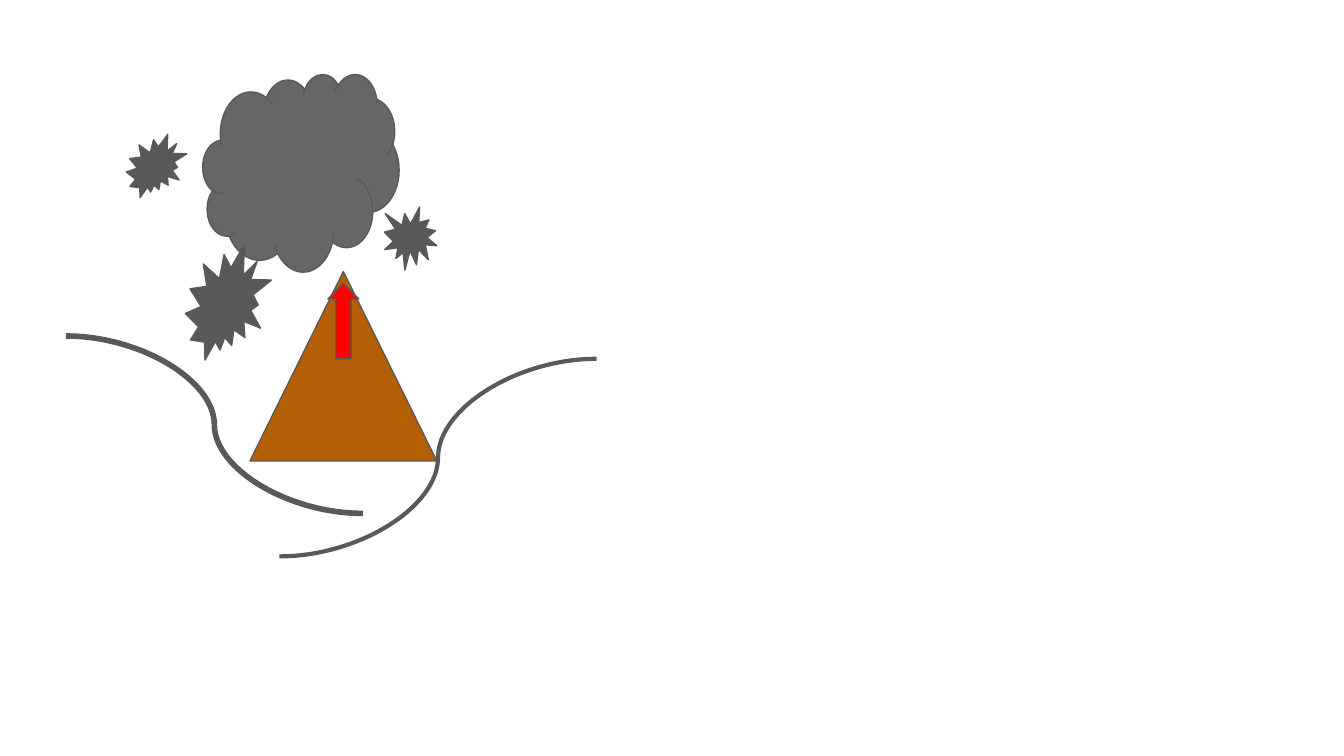
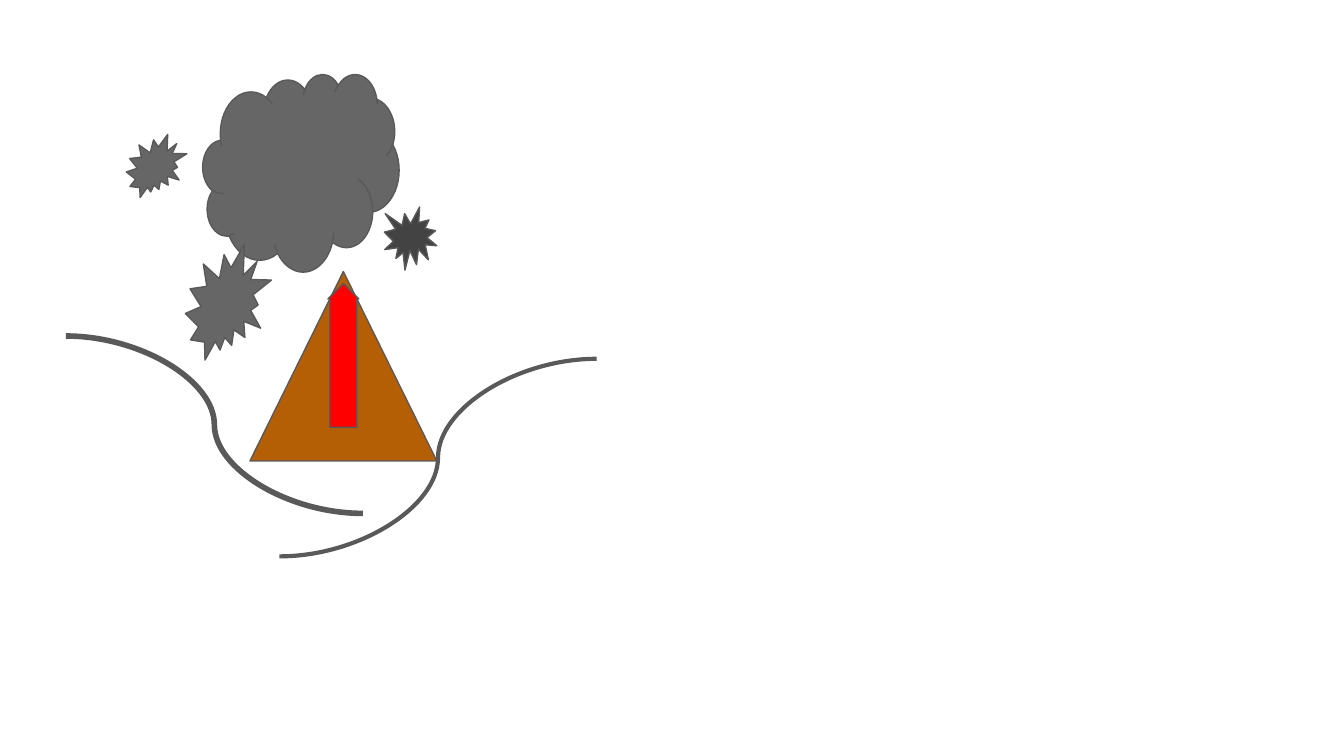
"""Build two slides of an erupting volcano above two colliding plates."""
from lxml import etree
from pptx import Presentation
from pptx.dml.color import RGBColor
from pptx.enum.shapes import MSO_CONNECTOR, MSO_SHAPE
from pptx.oxml.ns import qn
from pptx.util import Inches, Pt

CURVE = MSO_CONNECTOR.CURVE
TRIANGLE = MSO_SHAPE.ISOSCELES_TRIANGLE
CLOUD = MSO_SHAPE.CLOUD
SMALL_BURST = MSO_SHAPE.EXPLOSION1
LARGE_BURST = MSO_SHAPE.EXPLOSION2
UP_ARROW = MSO_SHAPE.UP_ARROW

OUTLINE = RGBColor(0x59, 0x59, 0x59)
ASH = RGBColor(0x66, 0x66, 0x66)
DARK_ASH = RGBColor(0x43, 0x43, 0x43)
EARTH = RGBColor(0xB4, 0x5F, 0x06)
LAVA = RGBColor(0xFF, 0x00, 0x00)
BLANK_LAYOUT = 6
SLIDE_WIDTH = Inches(10)
SLIDE_HEIGHT = SLIDE_WIDTH * 9 // 16

PLATES = [
    ((0.49, 2.5), (2.7, 3.82), 3),
    ((4.44, 2.67), (2.08, 4.14), 2.25),
]
MOUNTAIN = (TRIANGLE, (1.86, 2.02, 1.39, 1.41), EARTH)
ASH_CLOUD = (CLOUD, (1.51, 0.55, 1.46, 1.47), ASH)
RIGHT_ROCK = (SMALL_BURST, (2.86, 1.54, 0.39, 0.47))
LEFT_ROCKS = [
    (LARGE_BURST, (0.94, 1, 0.45, 0.47)),
    (LARGE_BURST, (1.38, 1.82, 0.64, 0.86)),
]
MAGMA_LEFT, MAGMA_TOP, MAGMA_WIDTH = 2.44, 2.11, 0.23

STAGES = [
    {"right_rock": OUTLINE, "left_rocks": OUTLINE, "magma_height": 0.56, "shaft": 0.5},
    {"right_rock": DARK_ASH, "left_rocks": ASH, "magma_height": 1.07, "shaft": 0.88},
]


def set_line(item, width):
    item.line.color.rgb = OUTLINE
    item.line.width = Pt(width)


def add_plate(slide, start, end, width):
    points = [Inches(value) for value in (*start, *end)]
    connector = slide.shapes.add_connector(CURVE, *points)
    set_line(connector, width)
    etree.SubElement(connector._element.spPr, qn("a:effectLst"))


def add_filled(slide, kind, box, color):
    shape = slide.shapes.add_shape(kind, *(Inches(value) for value in box))
    shape.shadow.inherit = False
    shape.fill.solid()
    shape.fill.fore_color.rgb = color
    set_line(shape, 0.75)
    return shape


def add_stage(presentation, stage):
    slide = presentation.slides.add_slide(presentation.slide_layouts[BLANK_LAYOUT])
    for plate in PLATES:
        add_plate(slide, *plate)
    add_filled(slide, *MOUNTAIN)
    add_filled(slide, *ASH_CLOUD)
    add_filled(slide, *RIGHT_ROCK, stage["right_rock"])
    for rock in LEFT_ROCKS:
        add_filled(slide, *rock, stage["left_rocks"])
    magma_box = (MAGMA_LEFT, MAGMA_TOP, MAGMA_WIDTH, stage["magma_height"])
    magma = add_filled(slide, UP_ARROW, magma_box, LAVA)
    magma.adjustments[0] = stage["shaft"]
    magma.adjustments[1] = 0.5


def main():
    presentation = Presentation()
    presentation.slide_width = SLIDE_WIDTH
    presentation.slide_height = SLIDE_HEIGHT
    for stage in STAGES:
        add_stage(presentation, stage)
    presentation.save("out.pptx")


if __name__ == "__main__":
    main()
